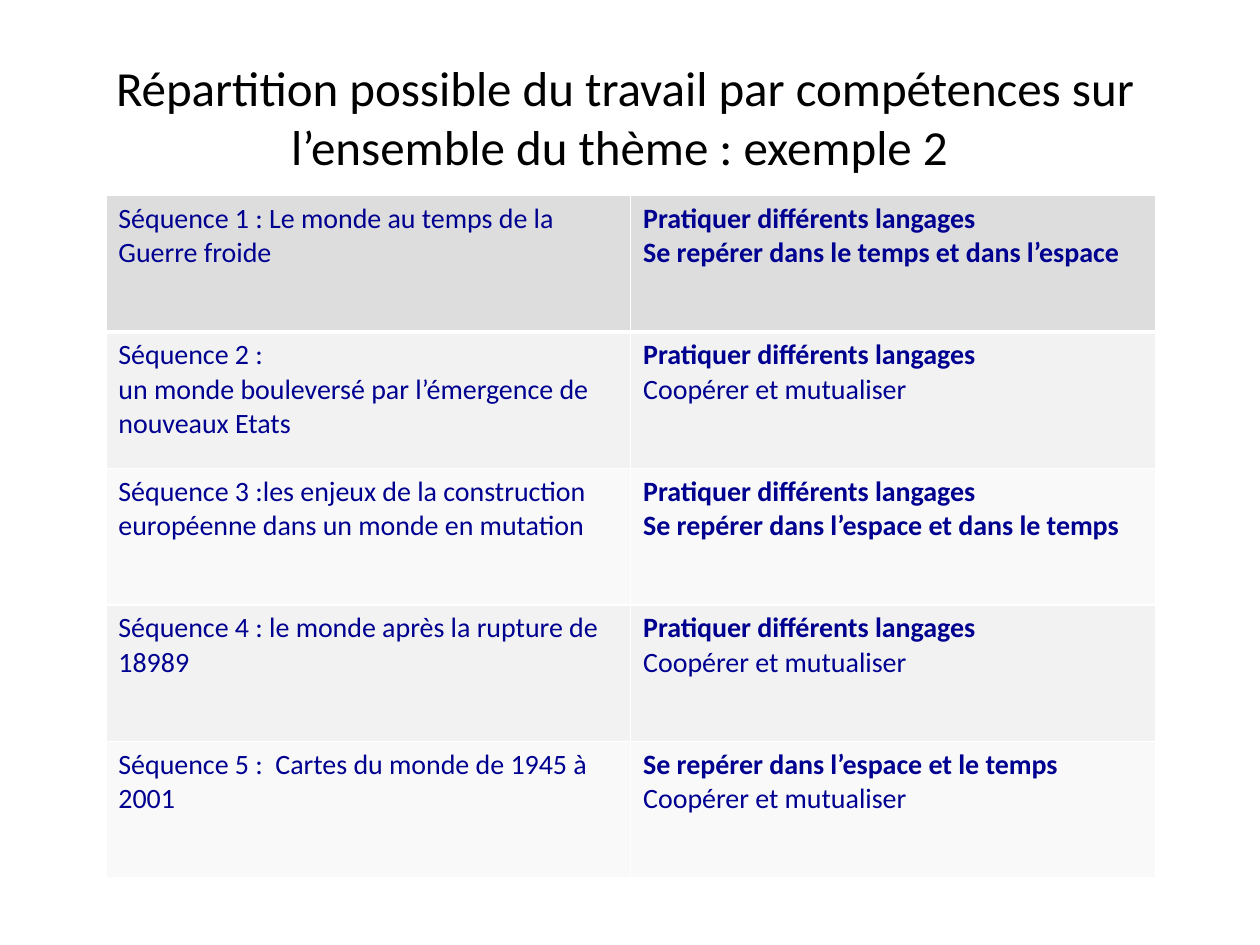
import dataclasses

import lxml.etree
import pptx
import pptx.dml.color
import pptx.enum.text
import pptx.oxml.ns
import pptx.util
from pptx.util import Inches


@dataclasses.dataclass(frozen=True)
class Theme:
    font: str = "Calibri"
    title_size: int = 28
    cell_size: int = 16
    title_color: str = "000000"
    cell_color: str = "000090"
    header_fill: str = "DDDDDD"
    band_fills: tuple = ("F2F2F2", "F9F9F9")
    border_color: str = "FFFFFF"


theme = Theme()


def style_paragraph(paragraph, size, color, bold=False):
    paragraph.font.name = theme.font
    paragraph.font.size = pptx.util.Pt(size)
    paragraph.font.bold = bold
    paragraph.font.color.rgb = pptx.dml.color.RGBColor.from_string(color)


def add_border(cell, side, points):
    qn = pptx.oxml.ns.qn
    properties = cell._tc.get_or_add_tcPr()
    line = lxml.etree.SubElement(properties, qn(f"a:ln{side}"), w=str(pptx.util.Pt(points)))
    fill = lxml.etree.SubElement(line, qn("a:solidFill"))
    lxml.etree.SubElement(fill, qn("a:srgbClr"), val=theme.border_color)


presentation = pptx.Presentation()
presentation.slide_width = Inches(10)
presentation.slide_height = Inches(7.5)
slide = presentation.slides.add_slide(presentation.slide_layouts[6])

# Title
title = slide.shapes.add_textbox(Inches(0.25), Inches(0.3), Inches(9.42), Inches(1.25))
title.text_frame.word_wrap = True
title.text_frame.vertical_anchor = pptx.enum.text.MSO_ANCHOR.MIDDLE
title.text_frame.text = (
    "Répartition possible du travail par compétences sur l’ensemble du thème : exemple 2 "
)
paragraph = title.text_frame.paragraphs[0]
paragraph.alignment = pptx.enum.text.PP_ALIGN.CENTER
style_paragraph(paragraph, theme.title_size, theme.title_color)

# Sequences and the skills worked on in each
languages = "Pratiquer différents langages"
cooperation = "Coopérer et mutualiser"
sequences = [
    (["Séquence 1 : Le monde au temps de la Guerre froide"],
     [languages, "Se repérer dans le temps et dans l’espace"]),
    (["Séquence 2 :", "un monde bouleversé par l’émergence de nouveaux Etats"],
     [languages, cooperation]),
    (["Séquence 3 :les enjeux de la construction européenne dans un monde en mutation"],
     [languages, "Se repérer dans l’espace et dans le temps"]),
    (["Séquence 4 : le monde après la rupture de 18989"],
     [languages, cooperation]),
    (["Séquence 5 :  Cartes du monde de 1945 à 2001"],
     ["Se repérer dans l’espace et le temps", cooperation]),
]

# Table: darker first row, then alternating bands
table = slide.shapes.add_table(
    len(sequences), 2, Inches(0.84), Inches(1.55), Inches(8.33), Inches(5.42)
).table

for row_index, row_cells in enumerate(sequences):
    if row_index == 0:
        row_fill = theme.header_fill
    else:
        row_fill = theme.band_fills[(row_index - 1) % 2]

    for column_index, lines in enumerate(row_cells):
        cell = table.cell(row_index, column_index)
        for side in "LRTB":
            under_header = (row_index, side) in [(0, "B"), (1, "T")]
            add_border(cell, side, 3 if under_header else 1)
        cell.fill.solid()
        cell.fill.fore_color.rgb = pptx.dml.color.RGBColor.from_string(row_fill)

        cell.text_frame.text = "\n".join(lines)
        for paragraph, line in zip(cell.text_frame.paragraphs, lines):
            is_key_skill = column_index == 1 and line != cooperation
            style_paragraph(paragraph, theme.cell_size, theme.cell_color, is_key_skill)

presentation.save("out.pptx")
